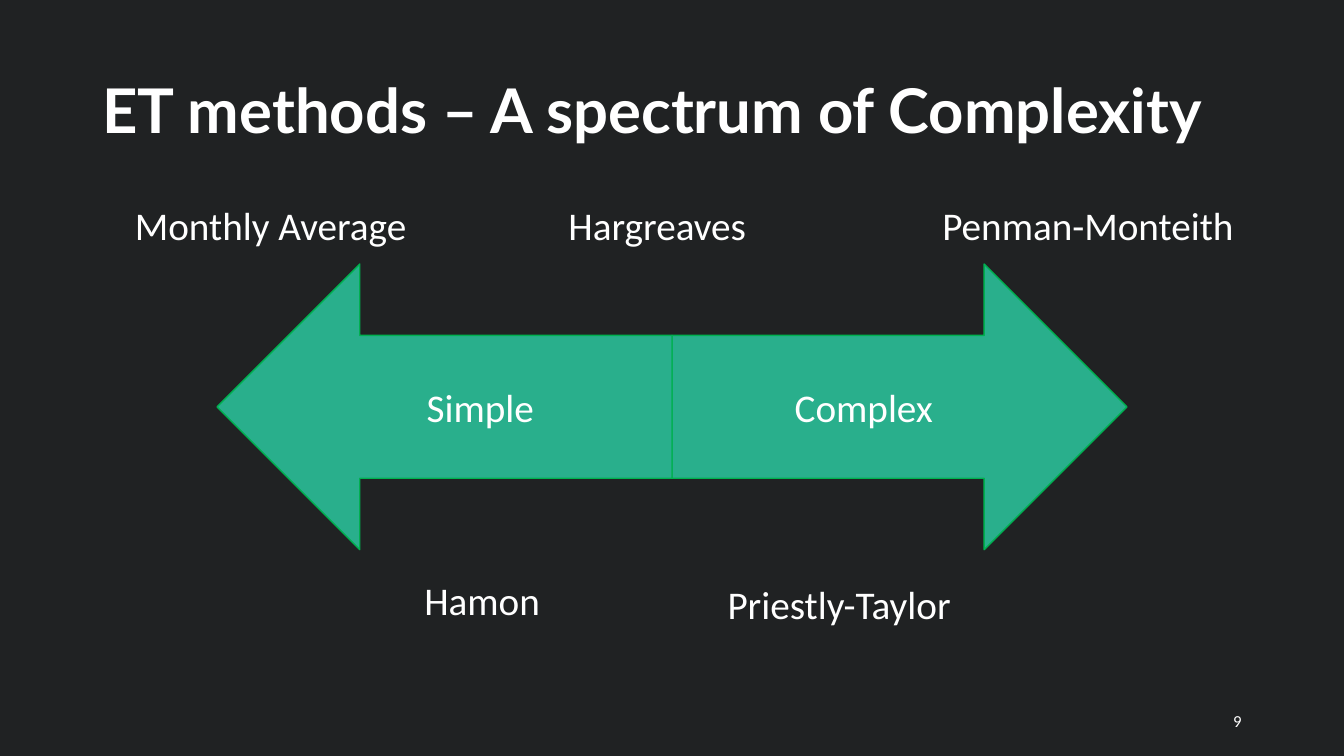
from dataclasses import dataclass

from pptx import Presentation
from pptx import util as u
from pptx.dml.color import RGBColor
from pptx.enum import shapes, text

COLOURS = {"background": "202223", "text": "FFFFFF", "arrow": "29AF8C", "outline": "00B050"}
SLIDE_WIDTH, SLIDE_HEIGHT = 960, 540
ARROW_TOP, ARROW_WIDTH, ARROW_HEIGHT = 188.6, 325, 204
LABEL_HEIGHT = 41.2


@dataclass(frozen=True)
class Arrow:
    caption: str
    left: float
    kind: shapes.MSO_SHAPE


@dataclass(frozen=True)
class Method:
    name: str
    left: float
    top: float
    width: float


ARROWS = [
    Arrow("Complex", SLIDE_WIDTH / 2, shapes.MSO_SHAPE.RIGHT_ARROW),
    Arrow("Simple", SLIDE_WIDTH / 2 - ARROW_WIDTH, shapes.MSO_SHAPE.LEFT_ARROW),
]
METHODS = [
    Method("Monthly Average", 89.3, 140.4, 228),
    Method("Hargreaves", 399, 140.4, 161),
    Method("Penman-Monteith", 666, 140.4, 240),
    Method("Hamon", 296, 408.2, 114.5),
    Method("Priestly-Taylor", 512.6, 411.1, 193),
]


def rgb(name: str) -> RGBColor:
    return RGBColor.from_string(COLOURS[name])


def write(box, words: str, *, size: float = 28, font: str = "Calibri", bold: bool = False,
          align=text.PP_ALIGN.LEFT, anchor=text.MSO_ANCHOR.MIDDLE,
          fit=text.MSO_AUTO_SIZE.NONE, spacing: float = 1.0) -> None:
    frame = box.text_frame
    frame.word_wrap = True
    frame.auto_size = fit
    frame.vertical_anchor = anchor
    para = frame.paragraphs[0]
    para.alignment = align
    para.line_spacing = spacing
    span = para.add_run()
    span.text = words
    span.font.size = u.Pt(size)
    span.font.name = font
    span.font.bold = bold
    span.font.color.rgb = rgb("text")


def place_title(page, words: str) -> None:
    title = page.shapes.title
    title.left, title.top = u.Pt(66), u.Pt(28.8)
    title.width, title.height = u.Pt(828), u.Pt(104.4)
    write(title, words, size=44, font="Lato", bold=True, spacing=0.9)


def add_box(page, left: float, top: float, width: float, height: float):
    return page.shapes.add_textbox(u.Pt(left), u.Pt(top), u.Pt(width), u.Pt(height))


def add_arrow(page, arrow: Arrow) -> None:
    shape = page.shapes.add_shape(arrow.kind, u.Pt(arrow.left), u.Pt(ARROW_TOP),
                                  u.Pt(ARROW_WIDTH), u.Pt(ARROW_HEIGHT))
    shape.shadow.inherit = False
    shape.fill.solid()
    shape.fill.fore_color.rgb = rgb("arrow")
    shape.line.color.rgb = rgb("outline")
    shape.line.width = u.Pt(1)
    write(shape, arrow.caption, align=text.PP_ALIGN.CENTER)


def add_method(page, method: Method) -> None:
    box = add_box(page, method.left, method.top, method.width, LABEL_HEIGHT)
    write(box, method.name, anchor=text.MSO_ANCHOR.TOP,
          fit=text.MSO_AUTO_SIZE.SHAPE_TO_FIT_TEXT)


def main() -> None:
    deck = Presentation()
    deck.slide_width, deck.slide_height = u.Pt(SLIDE_WIDTH), u.Pt(SLIDE_HEIGHT)
    page = deck.slides.add_slide(deck.slide_layouts.get_by_name("Title Only"))
    page.background.fill.solid()
    page.background.fill.fore_color.rgb = rgb("background")

    place_title(page, "ET methods – A spectrum of Complexity")
    for arrow in ARROWS:
        add_arrow(page, arrow)
    for method in METHODS:
        add_method(page, method)
    page_number = add_box(page, 678, 500.5, 216, 28.8)
    write(page_number, "9", size=12, align=text.PP_ALIGN.RIGHT)

    deck.save("out.pptx")


if __name__ == "__main__":
    main()
